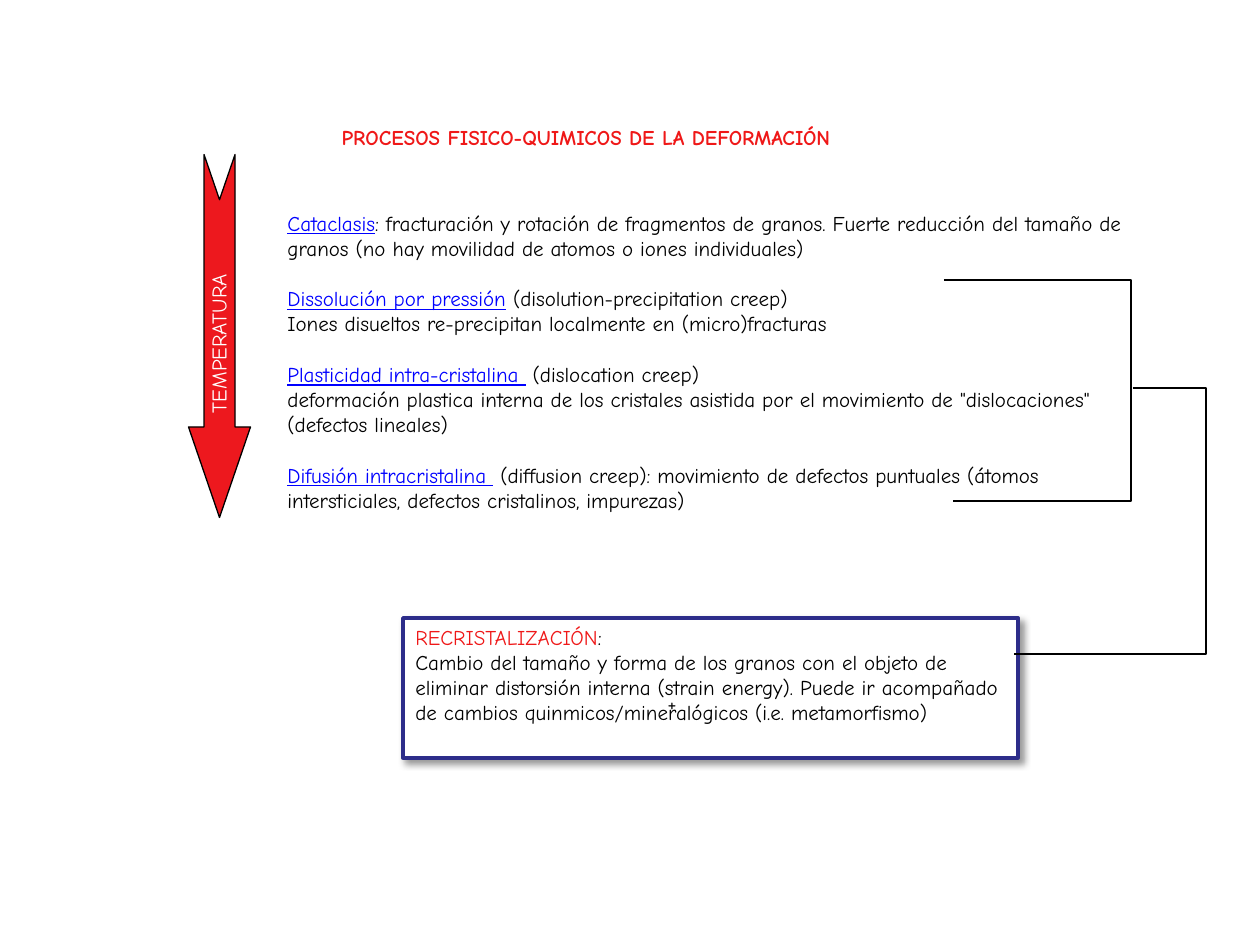
"""Build a slide on the physical and chemical processes of rock deformation."""
import pptx
import pptx.dml.color
import pptx.enum.shapes
import pptx.enum.text
import pptx.oxml
import pptx.util

FONT = "Comic Neue"
SCALE = 914400 / 126
HUES = {"black": "000000", "white": "FFFFFF", "blue": "0000FF",
        "red": "EF1818", "arrow": "ED181E", "navy": "2D2D8A"}

TITLE = "PROCESOS FISICO-QUIMICOS DE LA DEFORMACIÓN"
LABEL = "TEMPERATURA"
STEPS = [
    ("Cataclasis", ": fracturación y rotación de fragmentos de granos. Fuerte reducción "
     "del tamaño de granos (no hay movilidad de atomos o iones individuales)", ""),
    ("Dissolución por pressión", " (disolution-precipitation creep)",
     "Iones disueltos re-precipitan localmente en (micro)fracturas"),
    ("Plasticidad intra-cristalina ", " (dislocation creep)",
     "deformación plastica interna de los cristales asistida por el movimiento "
     "de \"dislocaciones\" (defectos lineales)"),
    ("Difusión intracristalina ", " (diffusion creep): movimiento de defectos puntuales "
     "(átomos intersticiales, defectos cristalinos, impurezas)", ""),
]
RESULT = ("RECRISTALIZACIÓN", ":",
          "Cambio del tamaño y forma de los granos con el objeto de eliminar distorsión "
          "interna (strain energy). Puede ir acompañado de cambios "
          "quinmicos/mineralógicos (i.e. metamorfismo)")
LINKS = [
    [(944, 280), (1131, 280), (1131, 501), (953, 501)],
    [(1133, 388), (1206, 388), (1206, 654), (1014, 654)],
]
SHADE = ('<a:outerShdw xmlns:a="http://schemas.openxmlformats.org/drawingml/2006/main" '
         'blurRad="50800" dist="38100" dir="2700000" algn="tl" rotWithShape="0">'
         '<a:srgbClr val="000000"><a:alpha val="40000"/></a:srgbClr></a:outerShdw>')


def px(size):
    return pptx.util.Emu(round(size * SCALE))


def hue(name):
    return pptx.dml.color.RGBColor.from_string(HUES[name])


def style(run, color="black", bold=False, under=False):
    font = run.font
    font.name, font.size = FONT, pptx.util.Pt(12)
    font.bold, font.underline = bold, under
    font.color.rgb = hue(color)


def write(frame, paras):
    """Fill a frame with (gap, runs) pairs, each run being (text, format)."""
    for i, (gap, runs) in enumerate(paras):
        para = frame.add_paragraph() if i else frame.paragraphs[0]
        para.alignment = pptx.enum.text.PP_ALIGN.LEFT
        para.space_before = pptx.util.Pt(gap)
        for text, form in runs:
            run = para.add_run()
            run.text = text
            style(run, **form)


def setup(frame, wrap=True):
    frame.word_wrap = wrap
    frame.auto_size = pptx.enum.text.MSO_AUTO_SIZE.NONE
    frame.vertical_anchor = pptx.enum.text.MSO_ANCHOR.TOP


def add_text(slide, box, paras, wrap=True):
    shape = slide.shapes.add_textbox(*map(px, box))
    setup(shape.text_frame, wrap)
    write(shape.text_frame, paras)
    return shape


def paint(shape, line, width, fill=None):
    shape.shadow.inherit = False
    shape.line.color.rgb = hue(line)
    shape.line.width = pptx.util.Pt(width)
    if fill:
        shape.fill.solid()
        shape.fill.fore_color.rgb = hue(fill)
    else:
        shape.fill.background()


def add_link(slide, points):
    form = slide.shapes.build_freeform(*points[0], scale=SCALE)
    form.add_line_segments(points[1:], close=False)
    paint(form.convert_to_shape(), "black", 0.75)


def entry(head, rest, more, gap, form):
    paras = [(gap, [(head, form), (rest, {})])]
    return paras + [(0, [(more, {})])] if more else paras


def main():
    deck = pptx.Presentation()
    deck.slide_width, deck.slide_height = px(1260), px(945)
    slide = deck.slides.add_slide(deck.slide_layouts[5])
    kinds = pptx.enum.shapes.MSO_SHAPE

    title = slide.shapes.title
    title.left, title.top, title.width, title.height = map(px, (329, 118, 572, 38))
    setup(title.text_frame, wrap=False)
    write(title.text_frame, [(0, [(TITLE, {"color": "red", "bold": True})])])

    paras = []
    for i, step in enumerate(STEPS):
        paras += entry(*step, 14.4 if i else 0, {"color": "blue", "under": True})
    add_text(slide, (275, 204, 861, 323), paras)

    add_link(slide, LINKS[0])
    box = slide.shapes.add_shape(kinds.RECTANGLE, *map(px, (403, 618, 615, 140)))
    paint(box, "navy", 2, "white")
    box.element.spPr.find(pptx.oxml.ns.qn("a:effectLst")).append(pptx.oxml.parse_xml(SHADE))
    setup(box.text_frame)
    write(box.text_frame, entry(*RESULT, 0, {"color": "red"}))
    add_link(slide, LINKS[1])
    add_text(slide, (655, 684, 38, 38), [(0, [("+", {})])], wrap=False)

    arrow = slide.shapes.add_shape(kinds.NOTCHED_RIGHT_ARROW, *map(px, (38, 305, 363, 62)))
    arrow.rotation = 90
    arrow.adjustments[0], arrow.adjustments[1] = 0.5, 1.46
    paint(arrow, "black", 0.75, "arrow")
    label = add_text(slide, (91, 278, 256, 39), [(0, [(LABEL, {"color": "white"})])])
    label.rotation = 270

    deck.save("out.pptx")


if __name__ == "__main__":
    main()
